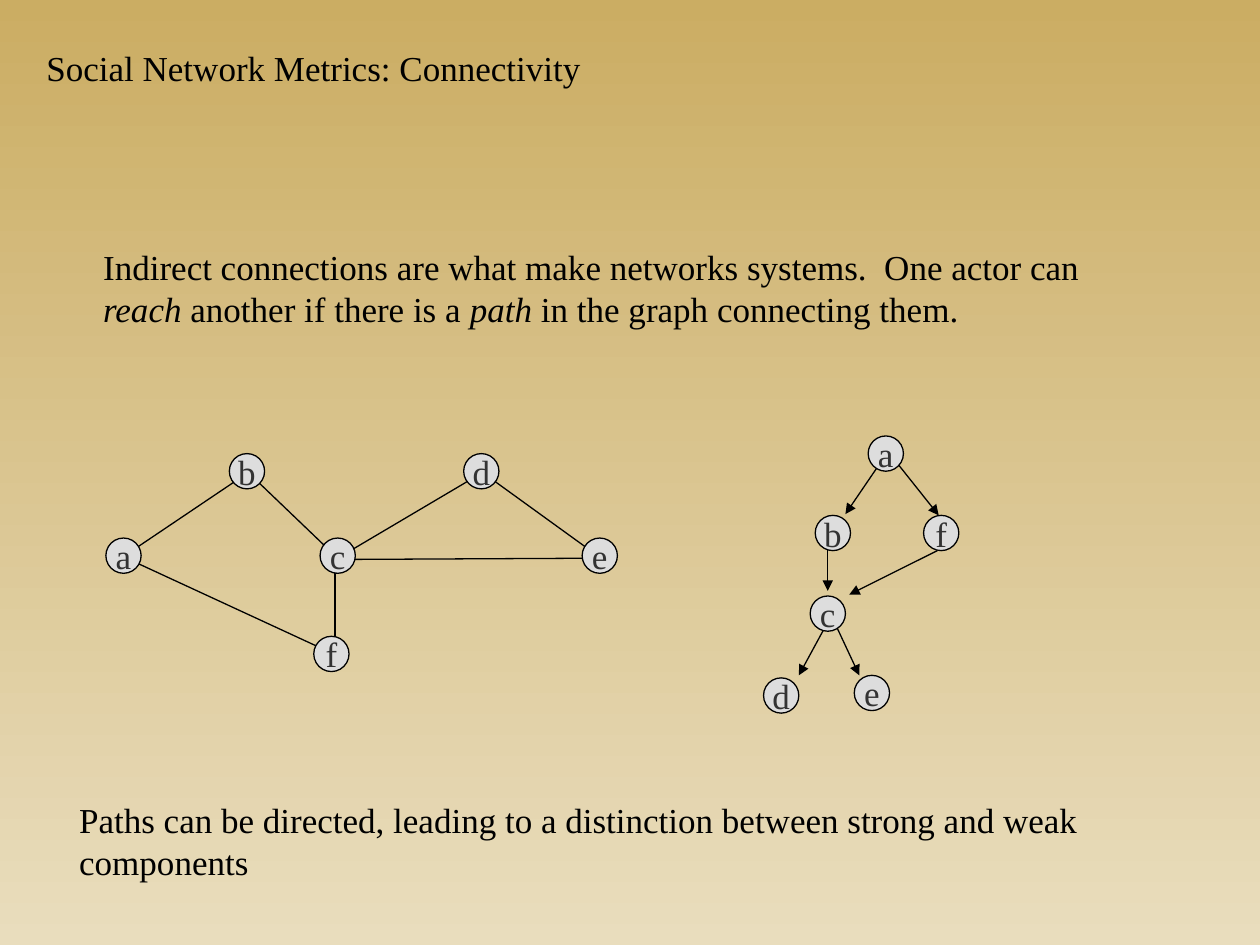
"""Build the slide on connectivity in social networks."""
from dataclasses import dataclass

from lxml import etree
from pptx import Presentation
from pptx.dml.color import RGBColor
from pptx.enum.shapes import MSO_CONNECTOR, MSO_SHAPE
from pptx.enum.text import MSO_ANCHOR, MSO_AUTO_SIZE, PP_ALIGN
from pptx.oxml.ns import qn
from pptx.slide import Slide
from pptx.text.text import _Paragraph
from pptx.util import Inches, Pt

STRAIGHT = MSO_CONNECTOR.STRAIGHT
OVAL = MSO_SHAPE.OVAL
MIDDLE = MSO_ANCHOR.MIDDLE
FIT_SHAPE = MSO_AUTO_SIZE.SHAPE_TO_FIT_TEXT
CENTER = PP_ALIGN.CENTER

BLACK = RGBColor(0x00, 0x00, 0x00)
CHARCOAL = RGBColor(0x33, 0x33, 0x33)
SILVER = RGBColor(0xDD, 0xDD, 0xDD)
GOLD = RGBColor(0xCB, 0xAD, 0x63)
CREAM = RGBColor(0xE9, 0xDD, 0xBD)

SLIDE_WIDTH, SLIDE_HEIGHT = Inches(10), Inches(7.5)
COLUMN, ROW = SLIDE_WIDTH / 100, SLIDE_HEIGHT / 75
NODE_SIZE = 2.8
FONT_NAME = "Times New Roman"
FONT_SIZE = Pt(20)
LINE_WIDTH = Pt(0.75)

Point = tuple[float, float]


@dataclass(frozen=True)
class Node:
    """A labelled actor, placed by its top left corner."""
    label: str
    column: float
    row: float


@dataclass(frozen=True)
class Edge:
    """A straight tie between two grid points."""
    start: Point
    end: Point
    directed: bool = False


@dataclass(frozen=True)
class Span:
    """A stretch of text in one style."""
    text: str
    italic: bool = False


@dataclass(frozen=True)
class Passage:
    """A text box and its spans."""
    column: float
    row: float
    columns: float
    rows: float
    spans: tuple[Span, ...]
    wrap: bool = True


NODES = (
    Node("a", 8.4, 42.7), Node("b", 18.2, 36), Node("c", 25.4, 42.7),
    Node("e", 46.2, 42.7), Node("d", 36.8, 36), Node("f", 24.9, 50.5),
    Node("d", 60.6, 53.8), Node("e", 67.8, 53.6), Node("c", 64.3, 47.3),
    Node("b", 64.7, 40.9), Node("f", 73.3, 40.9), Node("a", 68.9, 34.6),
)
EDGES = (
    Edge((26.6, 44.5), (26.6, 51.5)),
    Edge((9.6, 44.1), (26.7, 52)),
    Edge((65.9, 49), (63.4, 53.6), True),
    Edge((66, 48.9), (68.2, 53.6), True),
    Edge((65.7, 42.7), (65.7, 46.9), True),
    Edge((74.4, 43.7), (67.4, 47.2), True),
    Edge((70.3, 36.1), (67.1, 40.8), True),
    Edge((71, 36.5), (74.5, 40.9), True),
)
CHAIN = ((9.9, 44.1), (19.7, 37.5), (26.8, 44.3),
         (38.3, 37.5), (47.7, 44.3), (27.1, 44.4))
PASSAGES = (
    Passage(2.7, 3.2, 44.7, 4.4,
            (Span("Social Network Metrics: Connectivity"),), wrap=False),
    Passage(7.2, 19, 83.1, 7.7, (
        Span("Indirect connections are what make networks systems.  One actor can "),
        Span("reach", True),
        Span(" another if there is a "),
        Span("path", True),
        Span(" in the graph connecting them."),
    )),
    Passage(5.3, 62.9, 90.3, 7.7, (
        Span("Paths can be directed, leading to a distinction "
             "between strong and weak components"),
    )),
)


def place(column: float, row: float) -> tuple[int, int]:
    """Turn grid units into slide lengths."""
    return round(column * COLUMN), round(row * ROW)


def style_paragraph(para: _Paragraph, color: RGBColor) -> None:
    """Give a paragraph the slide's font."""
    para.font.name = FONT_NAME
    para.font.size = FONT_SIZE
    para.font.color.rgb = color


def paint_background(page: Slide) -> None:
    """Fill the page with a gradient from gold down to cream."""
    fill = page.background.fill
    fill.gradient()
    fill.gradient_angle = 270
    for stop, color in zip(fill.gradient_stops, (GOLD, CREAM)):
        stop.color.rgb = color


def draw_edge(page: Slide, edge: Edge) -> None:
    """Draw a tie, with an arrowhead if it is directed."""
    connector = page.shapes.add_connector(
        STRAIGHT, *place(*edge.start), *place(*edge.end))
    connector.line.color.rgb = BLACK
    connector.line.width = LINE_WIDTH
    if edge.directed:
        outline = connector.line._get_or_add_ln()
        etree.SubElement(outline, qn("a:tailEnd"), type="triangle")
    etree.SubElement(connector._element.spPr, qn("a:effectLst"))


def draw_chain(page: Slide, points: tuple[Point, ...]) -> None:
    """Draw an open line through the points."""
    start, *rest = (place(*point) for point in points)
    builder = page.shapes.build_freeform(*start)
    builder.add_line_segments(rest, close=False)
    chain = builder.convert_to_shape()
    chain.shadow.inherit = False
    chain.fill.background()
    chain.line.color.rgb = BLACK
    chain.line.width = LINE_WIDTH


def draw_node(page: Slide, node: Node) -> None:
    """Draw an actor as a labelled circle."""
    circle = page.shapes.add_shape(
        OVAL, *place(node.column, node.row), *place(NODE_SIZE, NODE_SIZE))
    circle.shadow.inherit = False
    circle.fill.solid()
    circle.fill.fore_color.rgb = SILVER
    circle.line.color.rgb = BLACK
    circle.line.width = LINE_WIDTH
    frame = circle.text_frame
    frame.word_wrap = False
    frame.vertical_anchor = MIDDLE
    para = frame.paragraphs[0]
    para.alignment = CENTER
    para.add_run().text = node.label
    style_paragraph(para, CHARCOAL)


def write_passage(page: Slide, passage: Passage) -> None:
    """Write a text box span by span."""
    box = page.shapes.add_textbox(
        *place(passage.column, passage.row),
        *place(passage.columns, passage.rows))
    frame = box.text_frame
    frame.word_wrap = passage.wrap
    frame.auto_size = FIT_SHAPE
    para = frame.paragraphs[0]
    style_paragraph(para, BLACK)
    for span in passage.spans:
        run = para.add_run()
        run.text = span.text
        if span.italic:
            run.font.italic = True


def main() -> None:
    """Assemble and save the deck."""
    deck = Presentation()
    deck.slide_width, deck.slide_height = SLIDE_WIDTH, SLIDE_HEIGHT
    page = deck.slides.add_slide(deck.slide_layouts[6])
    paint_background(page)
    for edge in EDGES:
        draw_edge(page, edge)
    draw_chain(page, CHAIN)
    for node in NODES:
        draw_node(page, node)
    for passage in PASSAGES:
        write_passage(page, passage)
    deck.save("out.pptx")


if __name__ == "__main__":
    main()
